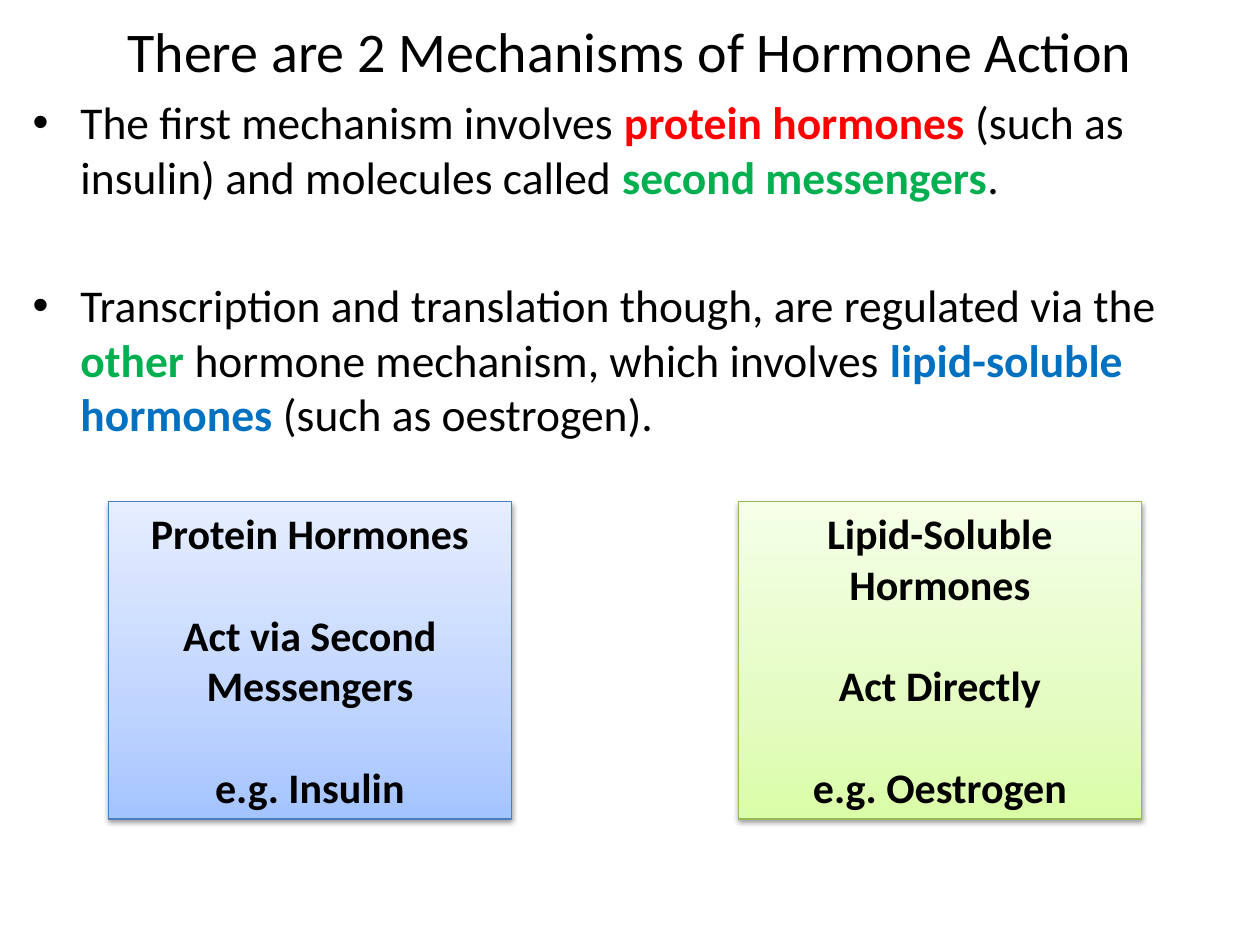
from lxml import etree
from pptx import Presentation
from pptx import util as u
from pptx.dml.color import RGBColor
from pptx.enum import shapes, text
from pptx.oxml import parse_xml
from pptx.oxml.ns import nsdecls, qn


def style(run, size, color="000000", bold=False):
    run.font.name = "Calibri"
    run.font.size = u.Pt(size)
    run.font.bold = bold
    run.font.color.rgb = RGBColor.from_string(color)


presentation = Presentation()
presentation.slide_width = u.Inches(10)
presentation.slide_height = u.Inches(7.5)
slide = presentation.slides.add_slide(presentation.slide_layouts[6])

# Title
title = slide.shapes.add_textbox(u.Inches(0.5), u.Inches(0.16), u.Inches(9), u.Inches(0.47))
title.text_frame.word_wrap = True
title.text_frame.vertical_anchor = text.MSO_ANCHOR.MIDDLE
title.text_frame.text = "There are 2 Mechanisms of Hormone Action"
paragraph = title.text_frame.paragraphs[0]
paragraph.alignment = text.PP_ALIGN.CENTER
style(paragraph.runs[0], 32)

# Bullets: space before in points, then text with its highlight colour
bullets = [
    (5.2, [
        ("The first mechanism involves ", None),
        ("protein hormones ", "FF0000"),
        ("(such as insulin) and molecules called ", None),
        ("second messengers", "00B050"),
        (".", None),
    ]),
    (42, [
        ("Transcription and translation though, are regulated via the ", None),
        ("other", "00B050"),
        (" hormone mechanism, which involves ", None),
        ("lipid-soluble hormones", "0070C0"),
        (" (such as oestrogen).", None),
    ]),
]
body = slide.shapes.add_textbox(u.Inches(0.16), u.Inches(0.7), u.Inches(9.69), u.Inches(6.64))
body.text_frame.word_wrap = True
for index, (space, pieces) in enumerate(bullets):
    paragraph = body.text_frame.paragraphs[0] if index == 0 else body.text_frame.add_paragraph()
    paragraph.space_before = u.Pt(space)
    properties = paragraph._p.get_or_add_pPr()
    properties.set("marL", str(u.Inches(0.38)))
    properties.set("indent", str(u.Inches(-0.38)))
    etree.SubElement(properties, qn("a:buFont")).set("typeface", "Arial")
    etree.SubElement(properties, qn("a:buChar")).set("char", "•")
    for words, highlight in pieces:
        run = paragraph.add_run()
        run.text = words
        style(run, 26, highlight or "000000", bold=highlight is not None)

# Comparison boxes: left, line colour, gradient from bottom to top, lines
boxes = [
    (0.86, "4B7EBC", ("A4C4FF", "BFD4FF", "E6EEFF"),
     ("Protein Hormones", "Act via Second Messengers", "e.g. Insulin")),
    (5.86, "98B955", ("DAFDA7", "E4FCC2", "F5FFE7"),
     ("Lipid-Soluble Hormones", "Act Directly", "e.g. Oestrogen")),
]
for left, line_color, gradient, lines in boxes:
    box = slide.shapes.add_shape(
        shapes.MSO_SHAPE.RECTANGLE, u.Inches(left), u.Inches(3.98), u.Inches(3.2), u.Inches(2.52))
    box.line.color.rgb = RGBColor.from_string(line_color)
    box.line.width = u.Pt(0.75)
    stops = "".join(
        f'<a:gs pos="{position}"><a:srgbClr val="{color}"/></a:gs>'
        for position, color in zip((0, 35000, 100000), gradient))
    box._element.spPr.find(qn("a:prstGeom")).addnext(parse_xml(
        f'<a:gradFill rotWithShape="1" {nsdecls("a")}><a:gsLst>{stops}</a:gsLst>'
        '<a:lin ang="16200000" scaled="1"/></a:gradFill>'))
    box.shadow.inherit = False
    box._element.spPr.find(qn("a:effectLst")).append(parse_xml(
        f'<a:outerShdw blurRad="{u.Pt(3.1)}" dist="{u.Pt(1.6)}" dir="5400000" '
        f'rotWithShape="0" {nsdecls("a")}>'
        '<a:srgbClr val="000000"><a:alpha val="38000"/></a:srgbClr></a:outerShdw>'))

    frame = box.text_frame
    frame.word_wrap = True
    frame.vertical_anchor = text.MSO_ANCHOR.TOP
    frame.text = "\n".join(lines)
    for index, paragraph in enumerate(frame.paragraphs):
        paragraph.alignment = text.PP_ALIGN.CENTER
        paragraph.space_before = u.Pt(29.3 if index else 0)
        style(paragraph.runs[0], 24, bold=True)

presentation.save("out.pptx")
